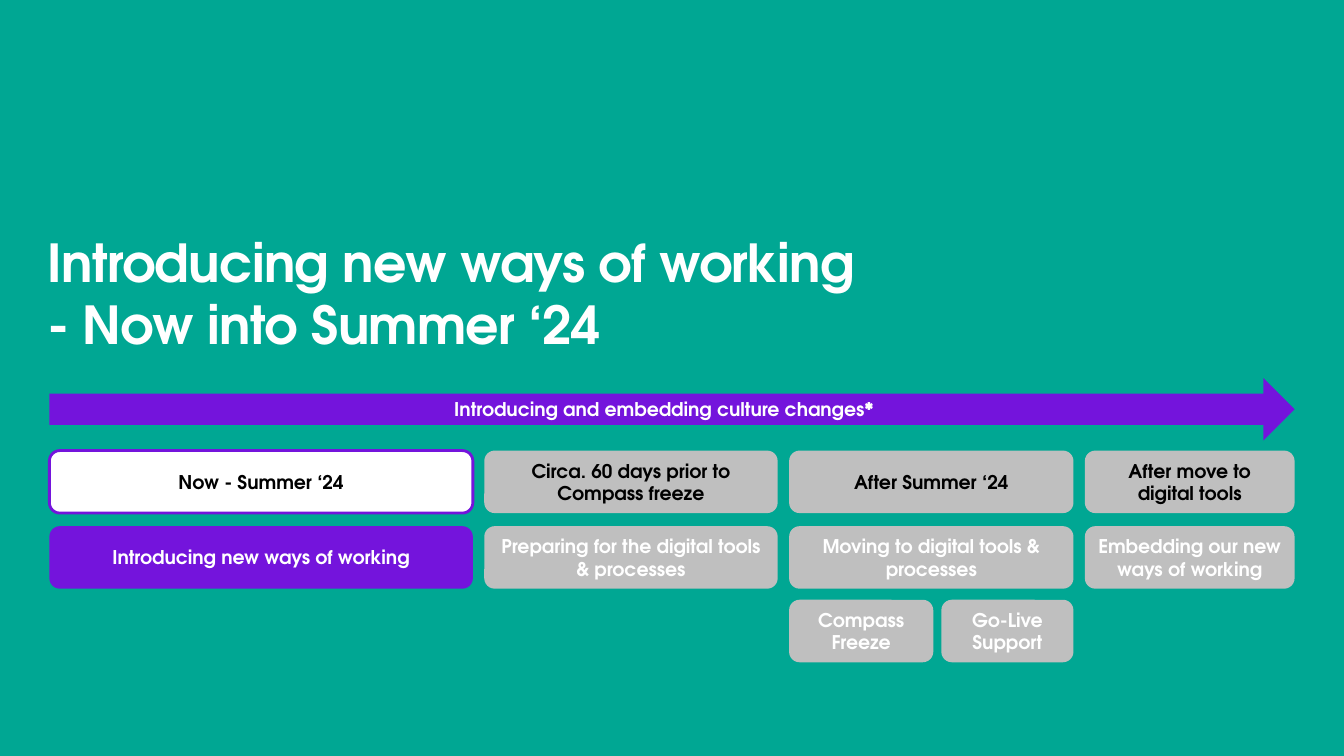
from pptx import Presentation
from pptx.dml.color import RGBColor
from pptx.enum import shapes, text
from pptx.util import Inches, Pt

TEAL = RGBColor(0x00, 0xA7, 0x93)
PURPLE = RGBColor(0x74, 0x14, 0xDC)
GREY = RGBColor(0xBF, 0xBF, 0xBF)
WHITE = RGBColor(0xFF, 0xFF, 0xFF)
BLACK = RGBColor(0x00, 0x00, 0x00)
FONT = "TeX Gyre Adventor"

TITLE = "Introducing new ways of working - Now into Summer ‘24"
ARROW = "Introducing and embedding culture changes*"
PHASES = [
    (4.2, "Now - Summer ‘24", "Introducing new ways of working", []),
    (2.91, "Circa. 60 days prior to Compass freeze",
     "Preparing for the digital tools & processes", []),
    (2.82, "After Summer ‘24", "Moving to digital tools & processes",
     [(1.43, "Compass Freeze"), (1.31, "Go-Live Support")]),
    (2.08, "After move to digital tools", "Embedding our new ways of working", []),
]

LEFT, WIDTH, HEIGHT = 0.49, 12.35, 0.62
ARROW_TOP, DATE_TOP, PHASE_TOP, STEP_TOP = 3.75, 4.47, 5.22, 5.95
PHASE_GAP = (WIDTH - sum(phase[0] for phase in PHASES)) / (len(PHASES) - 1)
STEP_GAP = 0.08


def style(p, size, color):
    p.font.name = FONT
    p.font.size = Pt(size)
    p.font.bold = True
    p.font.color.rgb = color


def add_box(s, kind, left, top, width, label, fill, color=WHITE, line=None):
    sp = s.shapes.add_shape(kind, Inches(left), Inches(top), Inches(width), Inches(HEIGHT))
    sp.shadow.inherit = False
    sp.fill.solid()
    sp.fill.fore_color.rgb = fill
    if line is None:
        sp.line.fill.background()
    else:
        sp.line.color.rgb = line
        sp.line.width = Pt(2)
    tf = sp.text_frame
    tf.word_wrap = True
    tf.vertical_anchor = text.MSO_ANCHOR.MIDDLE
    p = tf.paragraphs[0]
    p.text = label
    p.alignment = text.PP_ALIGN.CENTER
    style(p, 13.5, color)


def add_title(s):
    sp = s.shapes.title
    sp.left, sp.top, sp.width, sp.height = map(Inches, (0.47, 2.28, 8.2, 1.12))
    tf = sp.text_frame
    tf.margin_left = tf.margin_right = tf.margin_top = tf.margin_bottom = 0
    tf.word_wrap = True
    tf.auto_size = text.MSO_AUTO_SIZE.NONE
    tf.vertical_anchor = text.MSO_ANCHOR.TOP
    p = tf.paragraphs[0]
    p.alignment = text.PP_ALIGN.LEFT
    r = p.add_run()
    r.text = TITLE
    r._r.get_or_add_rPr().set("spc", "-50")
    style(p, 37.4, WHITE)


def add_phases(s):
    box = shapes.MSO_SHAPE.ROUNDED_RECTANGLE
    left = LEFT
    for i, (width, date, phase, steps) in enumerate(PHASES):
        current = i == 0
        add_box(s, box, left, DATE_TOP, width, date, WHITE if current else GREY,
                BLACK, PURPLE if current else None)
        add_box(s, box, left, PHASE_TOP, width, phase, PURPLE if current else GREY)
        step_left = left
        for step_width, step in steps:
            add_box(s, box, step_left, STEP_TOP, step_width, step, GREY)
            step_left += step_width + STEP_GAP
        left += width + PHASE_GAP


def main():
    prs = Presentation()
    prs.slide_width, prs.slide_height = Inches(13.33), Inches(7.5)
    s = prs.slides.add_slide(prs.slide_layouts[5])
    s.background.fill.solid()
    s.background.fill.fore_color.rgb = TEAL
    add_title(s)
    add_box(s, shapes.MSO_SHAPE.RIGHT_ARROW, LEFT, ARROW_TOP, WIDTH, ARROW, PURPLE)
    add_phases(s)
    prs.save("out.pptx")


if __name__ == "__main__":
    main()
